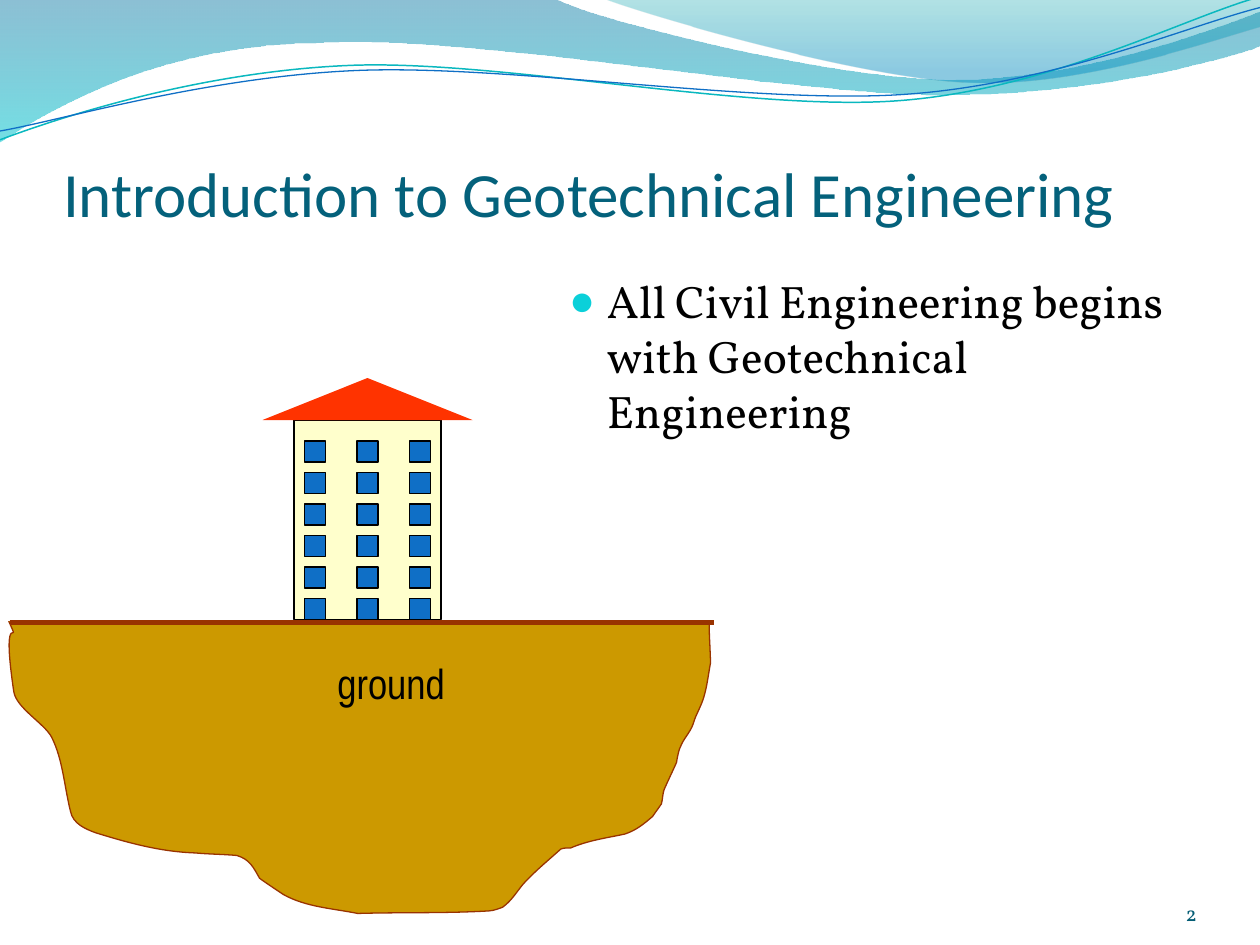
from collections import namedtuple

from lxml.etree import SubElement
from pptx import Presentation
from pptx.dml.color import RGBColor
from pptx.enum.shapes import MSO_CONNECTOR, MSO_SHAPE
from pptx.enum.text import MSO_ANCHOR, MSO_AUTO_SIZE, PP_ALIGN
from pptx.oxml.ns import qn
from pptx.util import Inches, Pt

Box = namedtuple("Box", "left top width height")

BLACK = RGBColor(0x00, 0x00, 0x00)
TITLE_TEAL = RGBColor(0x04, 0x61, 0x7B)
NUMBER_TEAL = RGBColor(0x04, 0x5D, 0x75)
BULLET_CYAN = RGBColor(0x0B, 0xD0, 0xD9)
BLUE = RGBColor(0x0F, 0x6F, 0xC6)
TURQUOISE = RGBColor(0x0A, 0xB8, 0xBF)
DEEP_BLUE = RGBColor(0x00, 0x74, 0xA1)
AQUA = RGBColor(0x00, 0xC6, 0xCF)
SEA_GREEN = RGBColor(0x00, 0xA1, 0xA9)
SKY_BLUE = RGBColor(0x00, 0x8B, 0xBF)
SOIL = RGBColor(0xCC, 0x99, 0x00)
SOIL_EDGE = RGBColor(0x99, 0x33, 0x00)
WALL = RGBColor(0xFF, 0xFF, 0xCC)
ROOF = RGBColor(0xFF, 0x33, 0x00)

# Outlines in inches from their box: a start point, then line ends (2 numbers)
# or cubic curves (two control points and an end, 6 numbers).
LEFT_WAVE = [
    (0, -0.01), (4.4, -0.01), (4.76, 0.17, 6.64, 0.63, 7.58, 0.63),
    (8.53, 0.63, 9.58, 0.26, 10, 0.09), (10.01, 0.36),
    (9.83, 0.44, 8.7, 0.76, 7.46, 0.75), (6.22, 0.75, 3.82, 0.28, 2.57, 0.34),
    (1.29, 0.35, 0.46, 0.83, -0.01, 1.13), (0, -0.01)]
RIGHT_WAVE = [
    (4.79, -0.01), (5.09, 0.11, 6.82, 0.62, 7.69, 0.65),
    (8.56, 0.69, 9.61, 0.32, 10, 0.21), (10, 0), (4.79, -0.01)]
UPPER_STRAND = [
    (0, 1.11), (0.48, 0.93, 1.58, 0.57, 2.77, 0.52),
    (3.95, 0.47, 5.93, 0.89, 7.13, 0.8), (8.33, 0.71, 9.38, 0.15, 9.98, -0.02)]
LOWER_STRAND = [
    (0, 1.04), (0.47, 0.96, 1.64, 0.61, 2.83, 0.56),
    (4.03, 0.51, 5.97, 0.83, 7.17, 0.75), (8.36, 0.67, 9.41, 0.21, 10, 0.06)]
SOIL_OUTLINE = [
    (0.07, 0), (0.18, 0.25, 0, -0.18, 0.11, 0.56), (0.13, 0.69, 0.35, 0.81, 0.41, 0.92),
    (0.5, 1.1, 0.51, 1.31, 0.56, 1.51), (0.58, 1.61, 0.68, 1.65, 0.76, 1.68),
    (1.02, 1.76, 1.27, 1.83, 1.55, 1.84), (1.66, 1.85, 1.77, 1.85, 1.88, 1.86),
    (1.98, 1.89, 2.01, 1.95, 2.06, 2.04), (2.07, 2.05, 2.22, 2.15, 2.25, 2.17),
    (2.43, 2.27, 2.64, 2.28, 2.84, 2.32), (3.19, 2.31, 3.53, 2.32, 3.88, 2.3),
    (3.92, 2.3, 3.99, 2.27, 3.99, 2.27), (4.06, 2.22, 4.1, 2.15, 4.15, 2.09),
    (4.24, 1.99, 4.35, 1.9, 4.45, 1.81), (4.47, 1.8, 4.5, 1.8, 4.53, 1.8),
    (4.67, 1.74, 4.82, 1.72, 4.96, 1.69), (5.05, 1.66, 5.11, 1.61, 5.18, 1.55),
    (5.2, 1.52, 5.23, 1.48, 5.25, 1.45), (5.26, 1.41, 5.26, 1.37, 5.27, 1.34),
    (5.3, 1.27, 5.34, 1.19, 5.37, 1.12), (5.37, 1.11, 5.39, 1.01, 5.4, 1),
    (5.42, 0.94, 5.48, 0.88, 5.5, 0.82), (5.53, 0.73, 5.51, 0.79, 5.57, 0.65),
    (5.61, 0.55, 5.62, 0.43, 5.64, 0.33), (5.63, 0.06, 5.63, 0.16, 5.63, 0.03)]


def inch_box(left, top, width, height):
    return Box(*(Inches(length) for length in (left, top, width, height)))


def paint(shape, fill=None, line=None, weight=0.75):
    shape.shadow.inherit = False
    if fill is None:
        shape.fill.background()
    else:
        shape.fill.solid()
        shape.fill.fore_color.rgb = fill
    if line is None:
        shape.line.fill.background()
    else:
        shape.line.color.rgb = line
        shape.line.width = Pt(weight)


def bend(shape, segments):
    """Join each three straight steps that stand for a cubic curve into one."""
    steps = iter(list(shape._element.iter(qn("a:lnTo"))))
    for segment in segments:
        first = next(steps)
        if len(segment) == 6:
            first.tag = qn("a:cubicBezTo")
            for _ in range(2):
                step = next(steps)
                first.append(step[0])
                step.getparent().remove(step)


def add_outline(page, box, outline, **look):
    start, *segments = outline
    points = [(Inches(segment[i]), Inches(segment[i + 1]))
              for segment in segments for i in range(0, len(segment), 2)]
    builder = page.shapes.build_freeform(Inches(start[0]), Inches(start[1]))
    builder.add_line_segments(points, close=start == segments[-1])
    shape = builder.convert_to_shape(box.left, box.top)
    bend(shape, segments)
    paint(shape, **look)
    return shape


def fade(shape, stops):
    """Fill from top to bottom with (position, colour, opacity percent) stops."""
    shape.fill.gradient()
    shape.fill.gradient_angle = 270
    for stop, (position, colour, _) in zip(shape.fill.gradient_stops, stops):
        stop.position = position
        stop.color.rgb = colour
    for tint, (_, _, opacity) in zip(shape._element.spPr.iter(qn("a:srgbClr")), stops):
        SubElement(tint, qn("a:alpha"), val=str(opacity * 1000))


def format_text(frame, font, size, colour, align=PP_ALIGN.LEFT):
    for para in frame.paragraphs:
        para.alignment = align
        for span in para.runs:
            span.font.name = font
            span.font.size = Pt(size)
            span.font.color.rgb = colour


def place(shape, box):
    shape.left, shape.top, shape.width, shape.height = box


def clear_insets(frame, top=0):
    frame.margin_left = frame.margin_right = frame.margin_bottom = 0
    frame.margin_top = Inches(top)


def add_waves(page, box):
    fade(add_outline(page, box, LEFT_WAVE), [(0, DEEP_BLUE, 45), (1, AQUA, 55)])
    fade(add_outline(page, box, RIGHT_WAVE), [(0, SEA_GREEN, 30), (0.8, SKY_BLUE, 45)])
    add_outline(page, box, UPPER_STRAND, line=TURQUOISE, weight=0.85)
    add_outline(page, box, LOWER_STRAND, line=BLUE)


def set_title(page, box, text):
    title = page.shapes.title
    place(title, box)
    frame = title.text_frame
    frame.text = text
    frame.auto_size = MSO_AUTO_SIZE.NONE
    frame.vertical_anchor = MSO_ANCHOR.BOTTOM
    clear_insets(frame, top=0.05)
    format_text(frame, "Calibri", 36, TITLE_TEAL)


def set_body(page, box, text):
    body = page.placeholders[1]
    place(body, box)
    frame = body.text_frame
    frame.text = text
    frame.auto_size = MSO_AUTO_SIZE.NONE
    format_text(frame, "Vollkorn", 26, BLACK)
    props = frame.paragraphs[0]._p.get_or_add_pPr()
    props.set("marL", str(Inches(0.3)))
    props.set("indent", str(-Inches(0.3)))
    SubElement(SubElement(props, qn("a:buClr")), qn("a:srgbClr"), val=str(BULLET_CYAN))
    SubElement(props, qn("a:buSzPct"), val="95000")
    SubElement(props, qn("a:buChar"), char="●")


def add_page_number(page, box, text):
    frame = page.shapes.add_textbox(*box).text_frame
    frame.word_wrap = True
    frame.vertical_anchor = MSO_ANCHOR.BOTTOM
    clear_insets(frame)
    frame.text = text
    format_text(frame, "Vollkorn", 12, NUMBER_TEAL, PP_ALIGN.RIGHT)


def add_ground(page, box):
    add_outline(page, box, SOIL_OUTLINE, fill=SOIL, line=SOIL_EDGE)
    level = box.top + Inches(0.01)
    surface = page.shapes.add_connector(
        MSO_CONNECTOR.STRAIGHT, box.left + Inches(0.08), level, box.left + box.width, level)
    surface.line.color.rgb = SOIL_EDGE
    surface.line.width = Pt(2.5)
    SubElement(surface._element.spPr, qn("a:effectLst"))
    label = page.shapes.add_textbox(
        box.left + Inches(2.58), box.top + Inches(0.24), Inches(1.08), Inches(0.5))
    label.text_frame.word_wrap = False
    label.text_frame.text = "ground"
    format_text(label.text_frame, "Arial Narrow", 24, BLACK)


def add_house(page, box):
    """Draw roof, wall and windows on a grid of 20 columns by 23 rows."""
    def add_part(kind, column, row, columns, rows, **look):
        unit_x, unit_y = box.width / 20, box.height / 23
        part = page.shapes.add_shape(
            kind, round(box.left + column * unit_x), round(box.top + row * unit_y),
            round(columns * unit_x), round(rows * unit_y))
        paint(part, **look)

    add_part(MSO_SHAPE.RECTANGLE, 3, 4, 14, 19, fill=WALL, line=BLACK)
    add_part(MSO_SHAPE.ISOSCELES_TRIANGLE, 0, 0, 20, 4, fill=ROOF)
    for row in range(6, 22, 3):
        for column in (4, 9, 14):
            add_part(MSO_SHAPE.RECTANGLE, column, row, 2, 2, fill=BLUE, line=BLACK)


def main():
    deck = Presentation()
    deck.slide_width, deck.slide_height = Inches(10), Inches(7.5)
    page = deck.slides.add_slide(deck.slide_layouts[1])
    add_waves(page, inch_box(0, 0, 10, 1.13))
    set_title(page, inch_box(0.5, 0.77, 9, 1.06), "Introduction to Geotechnical Engineering")
    set_body(page, inch_box(53 / 12, 2.12, 61 / 12, 2.13),
             "All Civil Engineering begins with Geotechnical Engineering")
    add_page_number(page, inch_box(8.67, 6.95, 0.83, 0.4), "2")
    add_ground(page, inch_box(0, 4.93, 5.67, 2.32))
    add_house(page, inch_box(25 / 12, 3, 20 / 12, 23 / 12))
    deck.save("out.pptx")


if __name__ == "__main__":
    main()
